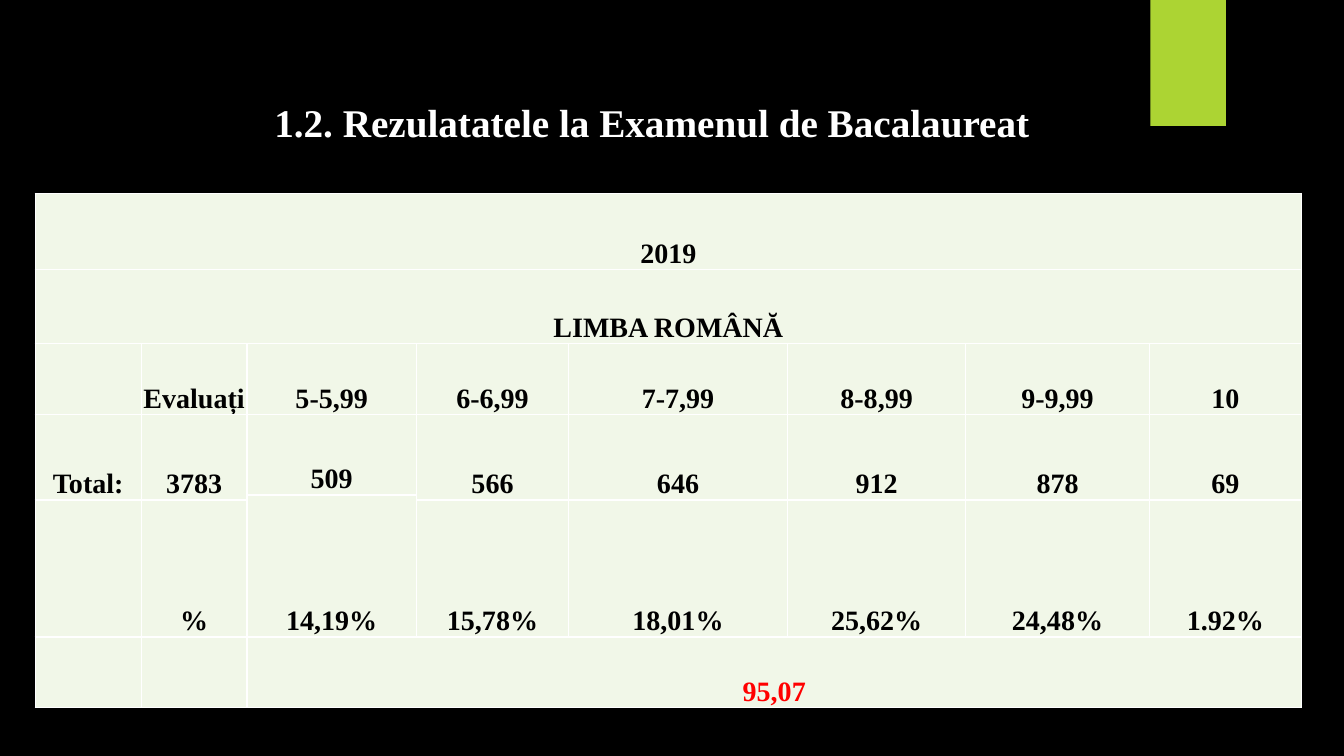
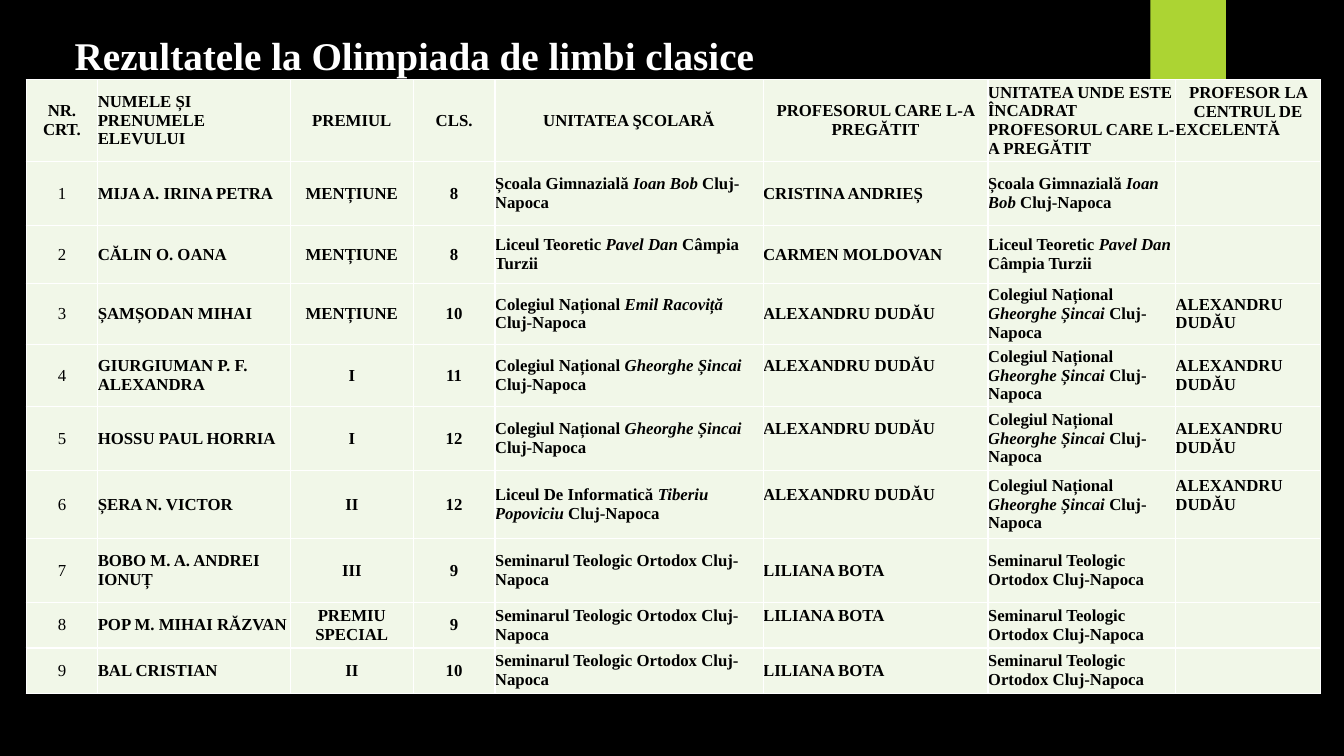
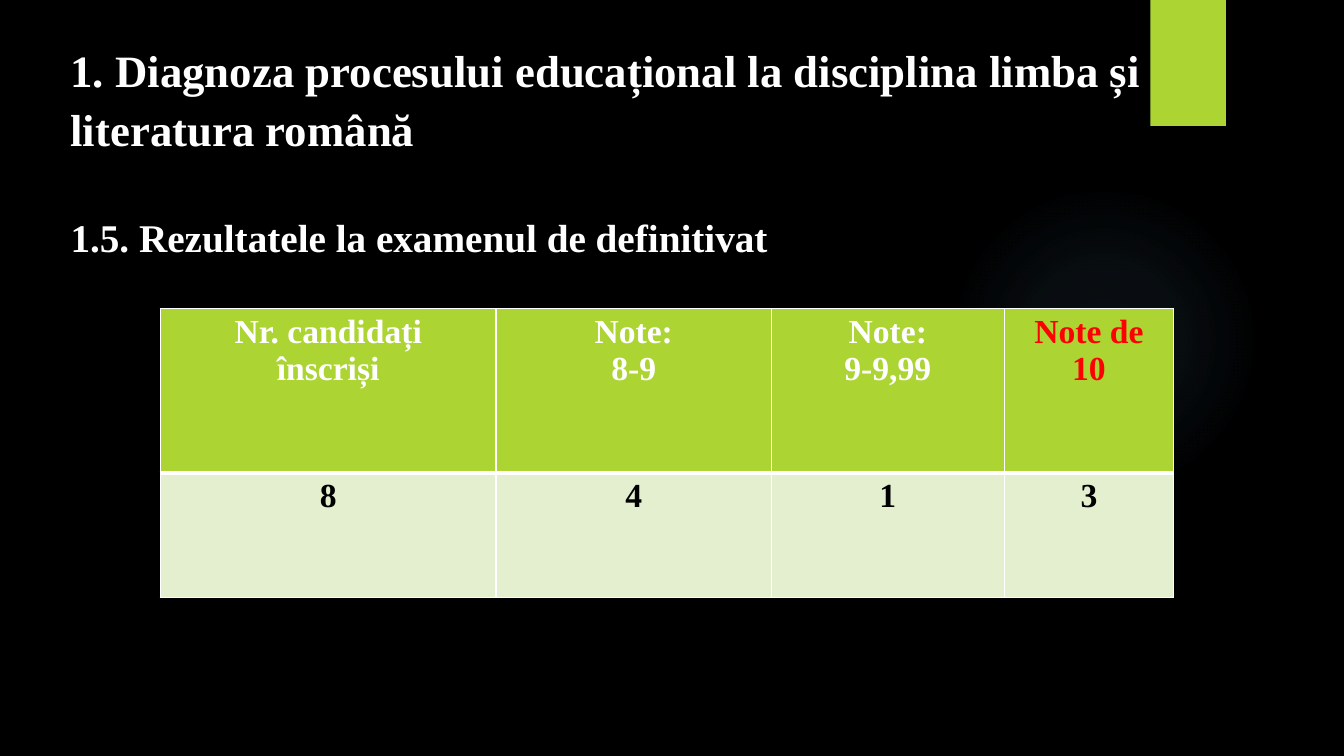
"""Build three slides of school results with a shared dark theme."""
from dataclasses import dataclass, field

from lxml import etree
from pptx import Presentation
from pptx import util as u
from pptx.dml.color import RGBColor
from pptx.enum import shapes, text
from pptx.oxml.ns import qn

BLACK = RGBColor(0x00, 0x00, 0x00)
WHITE = RGBColor(0xFF, 0xFF, 0xFF)
RED = RGBColor(0xFF, 0x00, 0x00)
LIME = RGBColor(0xAC, 0xD4, 0x33)
GLOW = RGBColor(0x7A, 0xC4, 0xF0)
PALE = RGBColor(0xF1, 0xF7, 0xE8)
MINT = RGBColor(0xE3, 0xEF, 0xCE)
FONT = "Times New Roman"
CENTER, LEFT = text.PP_ALIGN.CENTER, text.PP_ALIGN.LEFT
TOP, MIDDLE, BOTTOM = (text.MSO_ANCHOR.TOP, text.MSO_ANCHOR.MIDDLE,
                       text.MSO_ANCHOR.BOTTOM)


@dataclass
class Look:
    fill: RGBColor = PALE
    color: RGBColor = BLACK
    size: int = 20
    bold: bool = True
    align: text.PP_ALIGN = CENTER
    anchor: text.MSO_ANCHOR = BOTTOM
    inset: tuple[float, float, float, float] = (0.01, 0.01, 0.01, 0)
    top_line: float = 1
    bottom_line: float = 1


@dataclass
class Grid:
    at: tuple[float, float]
    cols: list[float]
    rows: list[float]
    texts: list[list[str]]
    merges: list[tuple[int, int, int, int]] = field(default_factory=list)


@dataclass
class Title:
    lines: list[str]
    sizes: list[int]
    at: tuple[float, float, float, float]
    gap: float = 0


def add_border(tc_pr, side: str, width: float) -> None:
    ln = etree.SubElement(tc_pr, qn(f"a:{side}"), w=str(u.Pt(width)))
    fill = etree.SubElement(ln, qn("a:solidFill"))
    etree.SubElement(fill, qn("a:srgbClr"), val=str(WHITE))


def style_run(r, size: int, color: RGBColor, bold: bool = True) -> None:
    r.font.name = FONT
    r.font.size = u.Pt(size)
    r.font.bold = bold
    r.font.color.rgb = color


def fill_cell(cell, content: str, look: Look) -> None:
    tc_pr = cell._tc.get_or_add_tcPr()
    widths = {"lnL": 1, "lnR": 1, "lnT": look.top_line, "lnB": look.bottom_line}
    for side, width in widths.items():
        add_border(tc_pr, side, width)
    cell.fill.solid()
    cell.fill.fore_color.rgb = look.fill
    cell.vertical_anchor = look.anchor
    (cell.margin_left, cell.margin_top,
     cell.margin_right, cell.margin_bottom) = map(u.Inches, look.inset)
    tf = cell.text_frame
    for i, line in enumerate(content.split("\n")):
        p = tf.add_paragraph() if i else tf.paragraphs[0]
        p.alignment = look.align
        for j, part in enumerate(line.split("*")):
            if part:
                r = p.add_run()
                r.text = part
                style_run(r, look.size, look.color, look.bold)
                r.font.italic = bool(j % 2)


def add_grid(s, grid: Grid, look_at):
    """Draw a table whose cell looks come from look_at(row, column)."""
    size = (sum(grid.cols), sum(grid.rows))
    frame = s.shapes.add_table(len(grid.rows), len(grid.cols),
                               *map(u.Inches, grid.at + size))
    table = frame.table
    table.first_row = table.horz_banding = False
    for col, width in zip(table.columns, grid.cols):
        col.width = u.Inches(width)
    for row, height in zip(table.rows, grid.rows):
        row.height = u.Inches(height)
    for r0, c0, r1, c1 in grid.merges:
        table.cell(r0, c0).merge(table.cell(r1, c1))
    for i, row in enumerate(grid.texts):
        for j, content in enumerate(row):
            fill_cell(table.cell(i, j), content, look_at(i, j))
    return table


def add_slide(prs, title: Title):
    """Add a slide with its title placed and formatted."""
    s = prs.slides.add_slide(prs.slide_layouts[5])
    sp = s.shapes.title
    sp.left, sp.top, sp.width, sp.height = map(u.Inches, title.at)
    tf = sp.text_frame
    tf.text = "\n".join(title.lines)
    tf.word_wrap = True
    tf.auto_size = text.MSO_AUTO_SIZE.NONE
    tf.vertical_anchor = TOP
    for i, (p, size) in enumerate(zip(tf.paragraphs, title.sizes)):
        p.alignment = LEFT
        p.line_spacing = 1.09
        p.space_before = u.Pt(title.gap if i else 0)
        for r in p.runs:
            style_run(r, size, WHITE)
    return s


def decorate_master(prs, s) -> None:
    """Put the background, glow and tab on the master."""
    master = prs.slide_master
    master.background.fill.solid()
    master.background.fill.fore_color.rgb = BLACK
    glow = s.shapes.add_shape(shapes.MSO_SHAPE.OVAL, *map(u.Inches, (9.41, 1.83, 3.08, 3.08)))
    tab = s.shapes.add_shape(shapes.MSO_SHAPE.RECTANGLE, *map(u.Inches, (11.41, 0, 0.75, 1.25)))
    tab.fill.solid()
    tab.fill.fore_color.rgb = LIME
    grad = etree.Element(qn("a:gradFill"), rotWithShape="1")
    stops = etree.SubElement(grad, qn("a:gsLst"))
    for pos, alpha in ((0, 7), (36, 6), (69, 0)):
        gs = etree.SubElement(stops, qn("a:gs"), pos=str(pos * 1000))
        color = etree.SubElement(gs, qn("a:srgbClr"), val=str(GLOW))
        etree.SubElement(color, qn("a:alpha"), val=str(alpha * 1000))
    circle = etree.SubElement(grad, qn("a:path"), path="circle")
    etree.SubElement(circle, qn("a:fillToRect"), l="50000", t="50000", r="50000", b="50000")
    glow.element.spPr.find(qn("a:prstGeom")).addnext(grad)
    for sp in (glow, tab):
        sp.line.fill.background()
        sp.shadow.inherit = False
        master.shapes.element.append(sp.element)


EXAM = Grid(
    (0.35, 1.92),
    [1.05, 1.05, 1.68, 1.51, 2.17, 1.77, 1.82, 1.51],
    [0.75, 0.74, 0.7, 0.8, 0.05, 1.36, 0.7],
    [
        ["2019"] + [""] * 7,
        ["LIMBA ROMÂNĂ"] + [""] * 7,
        ["", "Evaluați", "5-5,99", "6-6,99", "7-7,99", "8-8,99", "9-9,99", "10"],
        ["Total:", "3783", "509", "566", "646", "912", "878", "69"],
        ["", "", "14,19%"] + [""] * 5,
        ["", "%", "", "15,78%", "18,01%", "25,62%", "24,48%", "1.92%"],
        ["", "", "95,07"] + [""] * 5,
    ],
    [(0, 0, 0, 7), (1, 0, 1, 7), (4, 2, 5, 2), (6, 2, 6, 7)]
    + [(3, c, 4, c) for c in (0, 1, 3, 4, 5, 6, 7)],
)

BOB = "Școala Gimnazială *Ioan Bob* Cluj-Napoca"
DAN = "Liceul Teoretic *Pavel Dan* Câmpia Turzii"
RACOVITA = "Colegiul Național *Emil Racoviță* Cluj-Napoca"
SINCAI = "Colegiul Național *Gheorghe Șincai* Cluj-Napoca"
POPOVICIU = "Liceul De Informatică *Tiberiu Popoviciu* Cluj-Napoca"
SEMINAR = "Seminarul Teologic Ortodox Cluj-Napoca"
DUDAU = "ALEXANDRU DUDĂU"
BOTA = "LILIANA BOTA"
PUPILS = [
    ["MIJA A. IRINA PETRA", "MENȚIUNE", "8", BOB, "CRISTINA ANDRIEȘ", BOB, ""],
    ["CĂLIN O. OANA", "MENȚIUNE", "8", DAN, "CARMEN MOLDOVAN", DAN, ""],
    ["ȘAMȘODAN MIHAI", "MENȚIUNE", "10", RACOVITA, DUDAU, SINCAI, DUDAU],
    ["GIURGIUMAN P. F. ALEXANDRA", "I", "11", SINCAI, DUDAU, SINCAI, DUDAU],
    ["HOSSU PAUL HORRIA", "I", "12", SINCAI, DUDAU, SINCAI, DUDAU],
    ["ȘERA N. VICTOR", "II", "12", POPOVICIU, DUDAU, SINCAI, DUDAU],
    ["BOBO M. A. ANDREI IONUȚ", "III", "9", SEMINAR, BOTA, SEMINAR, ""],
    ["POP M. MIHAI RĂZVAN", "PREMIU SPECIAL", "9", SEMINAR, BOTA, SEMINAR, ""],
    ["BAL CRISTIAN", "II", "10", SEMINAR, BOTA, SEMINAR, ""],
]
OLYMPIAD = Grid(
    (0.26, 0.79),
    [0.71, 1.91, 1.22, 0.81, 2.66, 2.23, 1.86, 1.44],
    [0.81, 0.64, 0.57, 0.61, 0.61, 0.64, 0.67, 0.64, 0.45, 0.45],
    [["NR.\nCRT.", "NUMELE ȘI PRENUMELE ELEVULUI", "PREMIUL", "CLS.",
      "UNITATEA ŞCOLARĂ", "PROFESORUL CARE L-A PREGĂTIT",
      "UNITATEA UNDE ESTE ÎNCADRAT PROFESORUL CARE L-A PREGĂTIT",
      "PROFESOR LA CENTRUL DE\nEXCELENTĂ"]]
    + [[str(n)] + row for n, row in enumerate(PUPILS, 1)],
)
RAISED = {(0, 7), (4, 5), (5, 5), (6, 5), (6, 7), (8, 5)}

TENURE = Grid(
    (1.59, 3.06), [3.33, 2.73, 2.31, 1.68], [1.63, 1.24],
    [["Nr. candidați\nînscriși", "Note:\n8-9", "Note:\n9-9,99", "Note de 10"],
     ["8", "4", "1", "3"]],
)


def exam_look(row: int, col: int) -> Look:
    return Look(color=RED if row == 6 else BLACK)


def olympiad_look(row: int, col: int) -> Look:
    centered = col in (0, 2, 3) or (row == 0 and col not in (1, 6))
    return Look(size=12, bold=row == 0 or col > 0, anchor=MIDDLE,
                align=CENTER if centered else LEFT,
                inset=(0, 0, 0, 0.18 if (row, col) in RAISED else 0))


def tenure_look(row: int, col: int) -> Look:
    look = Look(size=24, anchor=TOP, inset=(0.1, 0.05, 0.1, 0.05))
    if row == 0:
        look.fill, look.color = LIME, RED if col == 3 else WHITE
        look.bottom_line = 3
    else:
        look.fill, look.top_line = MINT, 3
    return look


def main() -> None:
    prs = Presentation()
    prs.slide_width, prs.slide_height = u.Inches(13.33), u.Inches(7.5)

    s = add_slide(prs, Title(["1.2. Rezulatatele la Examenul de Bacalaureat"],
                             [28], (2.62, 0.88, 8.31, 0.57)))
    decorate_master(prs, s)
    add_grid(s, EXAM, exam_look)

    s = add_slide(prs, Title(["Rezultatele la Olimpiada de limbi clasice"],
                             [28], (0.64, 0.22, 10.91, 0.81)))
    table = add_grid(s, OLYMPIAD, olympiad_look)
    table.cell(0, 7).text_frame.paragraphs[1].alignment = LEFT

    s = add_slide(prs, Title(
        ["1. Diagnoza procesului educațional la disciplina limba și literatura română",
         "1.5. Rezultatele la examenul de definitivat"],
        [32, 28], (0.6, 0.33, 12.73, 3.2), gap=38))
    add_grid(s, TENURE, tenure_look)
    prs.save("out.pptx")


if __name__ == "__main__":
    main()
